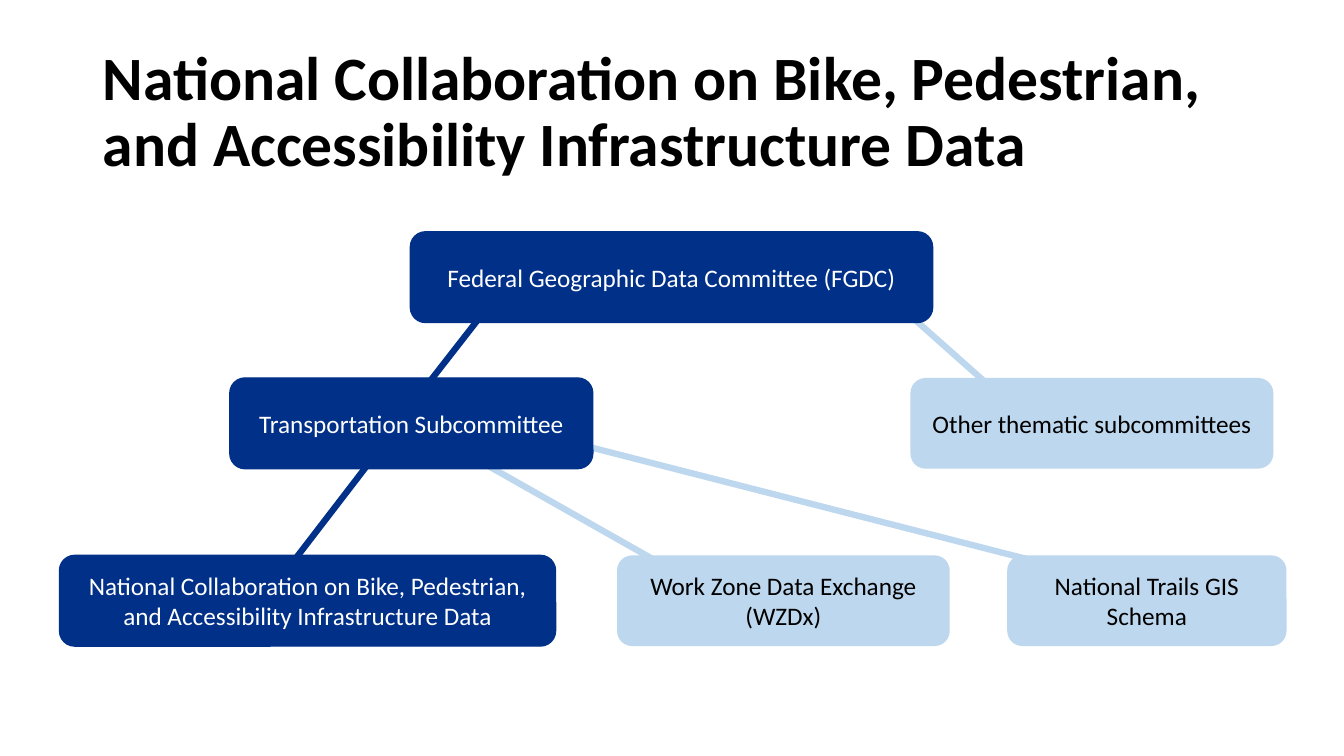
from pptx import Presentation
from pptx.dml.color import RGBColor
from pptx.enum import shapes, text
from pptx.oxml.ns import qn
from pptx.util import Inches, Pt
from lxml import etree

TITLE = "National Collaboration on Bike, Pedestrian, and Accessibility Infrastructure Data"

# Each level: top of its row, then boxes as (label, left, width, on main path)
LEVELS = [
    (2.3, [("Federal Geographic Data Committee (FGDC)", 4.07, 5.18, True)]),
    (3.75, [("Transportation Subcommittee", 2.28, 3.6, True),
            ("Other thematic subcommittees", 9.03, 3.6, False)]),
    (5.51, [(TITLE, 0.59, 4.92, True),
            ("Work Zone Data Exchange (WZDx)", 6.12, 3.3, False),
            ("National Trails GIS Schema", 9.99, 2.77, False)]),
]
BOX_HEIGHT = 0.9

# Links: start, end, on main path
LINKS = [
    ((8.96, 3.07), (9.86, 3.87), False),
    ((5.71, 4.4), (10.24, 5.56), False),
    ((4.75, 4.57), (6.64, 5.64), False),
    ((4.82, 3.07), (4.22, 3.84), True),
    ((3.64, 4.62), (2.91, 5.57), True),
]

THEME = {
    "font": "Calibri",
    "title_size": 44, "box_size": 18,
    "link_width": 4.5, "border_width": 1,
    "main": RGBColor(0x00, 0x30, 0x87), "main_text": RGBColor(255, 255, 255),
    "side": RGBColor(0xBD, 0xD7, 0xEE), "side_text": RGBColor(0, 0, 0),
    "title": RGBColor(0, 0, 0),
}


def path_color(on_main):
    return THEME["main" if on_main else "side"]


def set_text(sp, content, size, color, bold=False):
    tf = sp.text_frame
    tf.word_wrap = True
    tf.vertical_anchor = text.MSO_ANCHOR.MIDDLE
    tf.text = content
    p = tf.paragraphs[0]
    font = p.runs[0].font
    font.name, font.size, font.bold = THEME["font"], Pt(size), bold
    font.color.rgb = color
    return p


def add_link(slide, start, end, on_main):
    line = slide.shapes.add_connector(
        shapes.MSO_CONNECTOR.STRAIGHT, *map(Inches, start + end))
    line.line.color.rgb = path_color(on_main)
    line.line.width = Pt(THEME["link_width"])
    etree.SubElement(line._element.spPr, qn("a:effectLst"))


def add_box(slide, label, left, top, width, on_main):
    sp = slide.shapes.add_shape(
        shapes.MSO_SHAPE.ROUNDED_RECTANGLE,
        *map(Inches, (left, top, width, BOX_HEIGHT)))
    sp.shadow.inherit = False
    sp.fill.solid()
    sp.fill.fore_color.rgb = path_color(on_main)
    if on_main:
        sp.line.color.rgb = path_color(on_main)
        sp.line.width = Pt(THEME["border_width"])
    else:
        sp.line.fill.background()
    color = THEME["main_text" if on_main else "side_text"]
    p = set_text(sp, label, THEME["box_size"], color)
    p.alignment = text.PP_ALIGN.CENTER


def main():
    prs = Presentation()
    prs.slide_width, prs.slide_height = Inches(13.33), Inches(7.5)
    slide = prs.slides.add_slide(prs.slide_layouts[6])

    title = slide.shapes.add_textbox(*map(Inches, (0.92, 0.4, 11.55, 1.45)))
    p = set_text(title, TITLE, THEME["title_size"], THEME["title"], bold=True)
    p.line_spacing = 0.9

    for link in LINKS:
        add_link(slide, *link)
    for top, boxes in LEVELS:
        for label, left, width, on_main in boxes:
            add_box(slide, label, left, top, width, on_main)

    prs.save("out.pptx")


if __name__ == "__main__":
    main()
